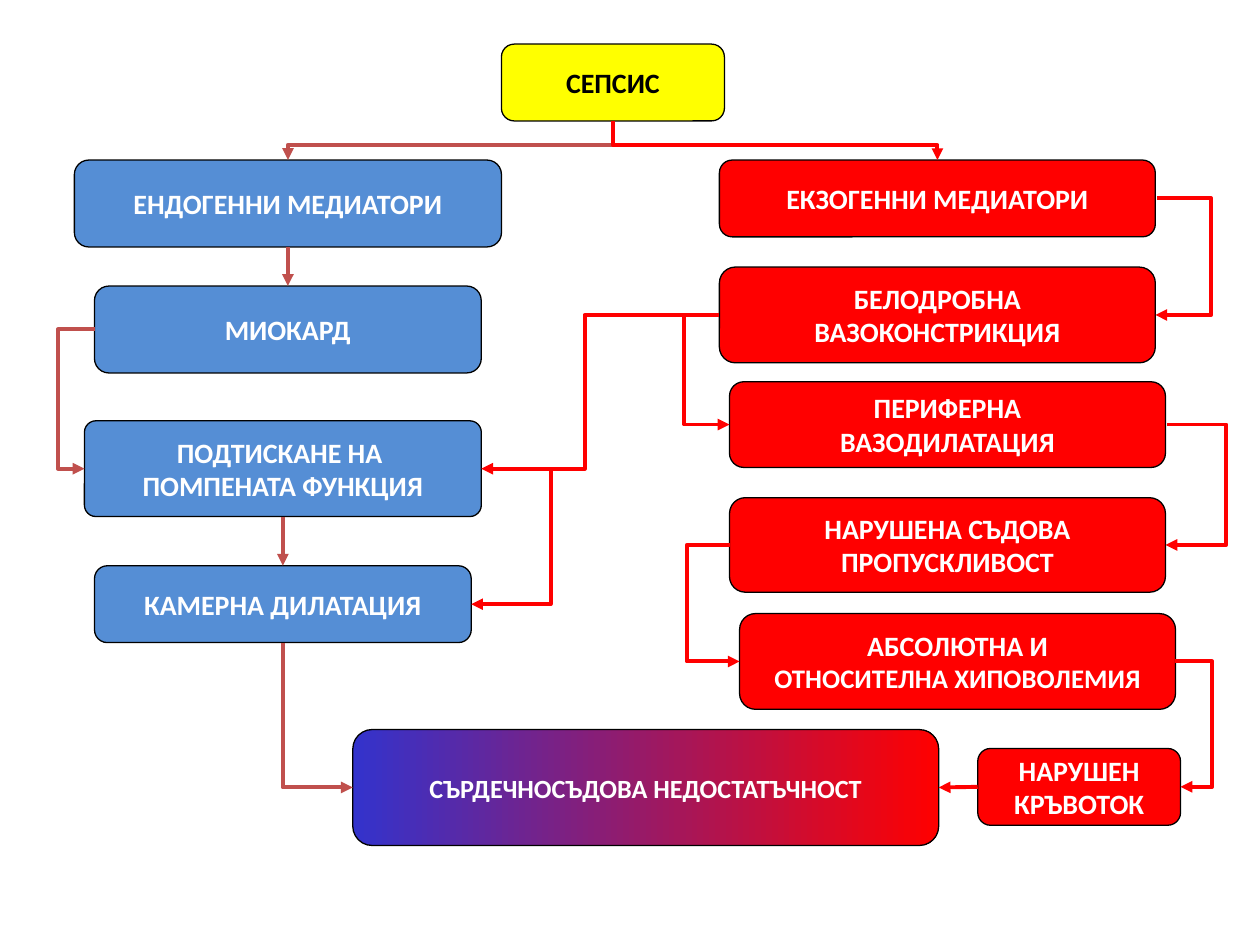
from dataclasses import dataclass
from lxml import etree
from pptx import Presentation
from pptx.dml.color import RGBColor
from pptx.enum.shapes import MSO_CONNECTOR, MSO_SHAPE
from pptx.enum.text import MSO_ANCHOR, PP_ALIGN
from pptx.oxml.ns import qn
from pptx.util import Inches, Pt

ROUND = MSO_SHAPE.ROUNDED_RECTANGLE
STRAIGHT, ELBOW = MSO_CONNECTOR.STRAIGHT, MSO_CONNECTOR.ELBOW
MIDDLE, CENTER = MSO_ANCHOR.MIDDLE, PP_ALIGN.CENTER


@dataclass(frozen=True)
class Theme:
    font: str = "Calibri"
    size: float = 16
    tight: float = 15.3
    small: float = 15
    edge: float = 0.75
    wire: float = 2.25
    black: str = "000000"
    white: str = "FFFFFF"
    yellow: str = "FFFF00"
    blue: str = "558ED5"
    navy: str = "3333CC"
    red: str = "FF0000"
    brown: str = "C0504D"


THEME = Theme()


def rgb(code):
    return RGBColor.from_string(code)


def add_node(slide, box, text, fill, color=THEME.white, size=THEME.size):
    """Rounded box with centred bold text; a pair of fills makes a gradient."""
    node = slide.shapes.add_shape(ROUND, *map(Inches, box))
    node.shadow.inherit = False
    if isinstance(fill, tuple):
        node.fill.gradient()
        node.fill.gradient_angle = 0
        for stop, code in zip(node.fill.gradient_stops, fill):
            stop.color.rgb = rgb(code)
    else:
        node.fill.solid()
        node.fill.fore_color.rgb = rgb(fill)
    node.line.color.rgb = rgb(THEME.black)
    node.line.width = Pt(THEME.edge)
    frame = node.text_frame
    frame.margin_left = frame.margin_right = 0
    frame.margin_top = frame.margin_bottom = 0
    frame.word_wrap = False
    frame.vertical_anchor = MIDDLE
    frame.text = text
    for para in frame.paragraphs:
        para.alignment = CENTER
        for run in para.runs:
            run.font.name, run.font.size = THEME.font, Pt(size)
            run.font.bold = True
            run.font.color.rgb = rgb(color)
    return node


def add_column(slide, left, top, fill, rows):
    """Nodes of one branch, each placed from the corner of the branch."""
    return [add_node(slide, (left + x, top + y, w, h), text, fill)
            for x, y, w, h, text in rows]


def left_branch(slide, left, top):
    nodes = add_column(slide, left, top, THEME.blue, [
        (0, 0, 3.39, 0.69, "ЕНДОГЕННИ МЕДИАТОРИ"),
        (0.16, 1, 3.07, 0.69, "МИОКАРД"),
        (0.08, 2.07, 3.15, 0.76, "ПОДТИСКАНЕ НА \nПОМПЕНАТА ФУНКЦИЯ"),
        (0.16, 3.22, 2.99, 0.61, "КАМЕРНА ДИЛАТАЦИЯ"),
    ])
    nodes[2].adjustments[0] = 0.12
    return nodes


def right_branch(slide, left, top):
    nodes = add_column(slide, left, top, THEME.red, [
        (0, 0, 3.46, 0.61, "ЕКЗОГЕННИ МЕДИАТОРИ"),
        (0, 0.85, 3.46, 0.76, "БЕЛОДРОБНА\nВАЗОКОНСТРИКЦИЯ"),
        (0.08, 1.76, 3.46, 0.68, "ПЕРИФЕРНА\nВАЗОДИЛАТАЦИЯ"),
        (0.08, 2.68, 3.46, 0.75, "НАРУШЕНА СЪДОВА\nПРОПУСКЛИВОСТ"),
        (0.16, 3.6, 3.46, 0.76, "АБСОЛЮТНА И\nОТНОСИТЕЛНА ХИПОВОЛЕМИЯ"),
        (2.05, 4.67, 1.61, 0.61, "НАРУШЕН\nКРЪВОТОК"),
    ])
    nodes[4].text_frame.paragraphs[1].runs[0].font.size = Pt(THEME.tight)
    return nodes


def side(node, name):
    """Middle of one side of a node."""
    mid_x, mid_y = node.left + node.width // 2, node.top + node.height // 2
    return {"left": (node.left, mid_y),
            "right": (node.left + node.width, mid_y),
            "top": (mid_x, node.top),
            "bottom": (mid_x, node.top + node.height)}[name]


def add_wire(slide, kind, tip, tail, color):
    """Connector with its arrowhead at the tip."""
    wire = slide.shapes.add_connector(kind, *tip, *tail)
    wire.line.color.rgb = rgb(color)
    wire.line.width = Pt(THEME.wire)
    wire.line._get_or_add_ln().append(
        etree.Element(qn("a:headEnd"), type="triangle"))
    etree.SubElement(wire._element.spPr, qn("a:effectLst"))
    return wire


def set_bend(wire, ratio):
    guides = wire._element.spPr.find(qn("a:prstGeom")).get_or_add_avLst()
    etree.SubElement(guides, qn("a:gd"), name="adj1",
                     fmla=f"val {round(ratio * 100000)}")


def add_side(slide, tip, tail, bend, color):
    """Elbow that leaves both ends sideways and runs upright at x = bend."""
    if abs(tail[0] - tip[0]) < Inches(0.01):
        tail = (tip[0] + Inches(0.01), tail[1])
    wire = add_wire(slide, ELBOW, tip, tail, color)
    set_bend(wire, (Inches(bend) - tip[0]) / (tail[0] - tip[0]))


def add_drop(slide, tip, tail, bend, color):
    """Elbow that leaves both ends upright and runs level at y = bend."""
    mid_x, mid_y = (tip[0] + tail[0]) // 2, (tip[1] + tail[1]) // 2
    half_x, half_y = (tail[0] - tip[0]) // 2, (tail[1] - tip[1]) // 2
    wire = add_wire(slide, ELBOW, (mid_x - half_y, mid_y + half_x),
                    (mid_x + half_y, mid_y - half_x), color)
    wire._element.spPr.find(qn("a:xfrm")).set("rot", "5400000")
    set_bend(wire, (Inches(bend) - tip[1]) / (tail[1] - tip[1]))


def add_turn(slide, tip, tail, color):
    """Elbow with a single corner, level at the tip."""
    wire = add_wire(slide, ELBOW, tip, tail, color)
    wire._element.spPr.find(qn("a:prstGeom")).set("prst", "bentConnector2")


def add_links(slide, root, left, right, goal):
    red, brown = THEME.red, THEME.brown
    endo, heart, pump, room = left
    exo, lung, vessel, leak, volume, flow = right
    # From the root to both branches
    for node, color in ((endo, brown), (exo, red)):
        add_drop(slide, side(node, "top"), side(root, "bottom"), 1.15, color)
    # Down the left branch
    for low, high in ((heart, endo), (room, pump)):
        add_wire(slide, STRAIGHT, side(low, "top"), side(high, "bottom"), brown)
    # Around the sides of both branches
    for low, high, edge, bend, color in (
            (pump, heart, "left", 0.46, brown),
            (lung, exo, "right", 9.62, red),
            (vessel, lung, "left", 5.43, red),
            (leak, vessel, "right", 9.74, red),
            (volume, leak, "left", 5.45, red),
            (flow, volume, "right", 9.62, red)):
        add_side(slide, side(low, edge), side(high, edge), bend, color)
    # Across from the right branch to the left
    add_side(slide, side(pump, "right"), (Inches(5.47), Inches(2.5)), 4.64, red)
    add_turn(slide, side(room, "right"), (Inches(4.37), Inches(3.72)), red)
    # Into the outcome
    add_turn(slide, side(goal, "left"), side(room, "bottom"), brown)
    add_wire(slide, STRAIGHT, side(goal, "right"), side(flow, "left"), red)


def main():
    deck = Presentation()
    deck.slide_width, deck.slide_height = Inches(10), Inches(7.5)
    slide = deck.slides.add_slide(deck.slide_layouts[6])
    root = add_node(slide, (3.98, 0.35, 1.77, 0.61), "СЕПСИС",
                    THEME.yellow, THEME.black)
    left = left_branch(slide, 0.59, 1.27)
    right = right_branch(slide, 5.71, 1.27)
    goal = add_node(slide, (2.8, 5.79, 4.65, 0.92),
                    "СЪРДЕЧНОСЪДОВА НЕДОСТАТЪЧНОСТ",
                    (THEME.navy, THEME.red), size=THEME.small)
    add_links(slide, root, left, right, goal)
    deck.save("out.pptx")


if __name__ == "__main__":
    main()
